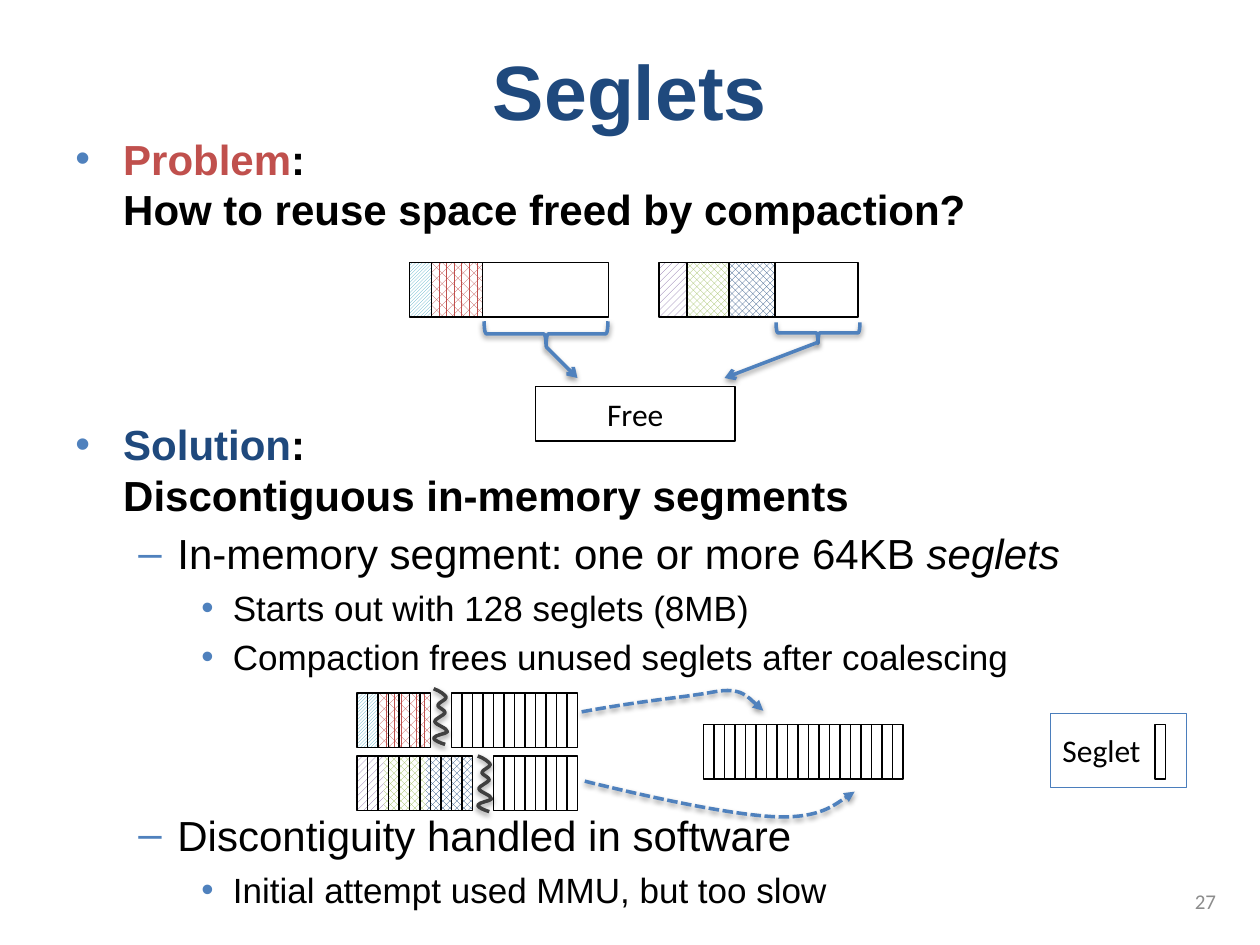
import pptx
import pptx.util
import pptx.dml.color
import pptx.enum.dml
import pptx.enum.shapes
import pptx.enum.text
import pptx.oxml
import pptx.oxml.ns

Pt = pptx.util.Pt
Shape = pptx.enum.shapes.MSO_SHAPE
Align = pptx.enum.text.PP_ALIGN
Anchor = pptx.enum.text.MSO_ANCHOR
Pattern = pptx.enum.dml.MSO_PATTERN
qn = pptx.oxml.ns.qn

UNIT = pptx.util.Inches(1) / 12
TALL = 5.2
HUES = {
    "navy": "1F497D", "blue": "4F81BD", "edge": "4B7EBC", "red": "C0504D",
    "teal": "4BACC6", "green": "9BBB59", "violet": "8064A2", "black": "000000",
    "white": "FFFFFF", "grey": "8C8C8C", "dark": "404040",
}
HATCH = {
    "teal": Pattern.DARK_UPWARD_DIAGONAL, "red": Pattern.PERCENT_60,
    "violet": Pattern.WIDE_UPWARD_DIAGONAL, "green": Pattern.LARGE_CHECKER_BOARD,
    "navy": Pattern.LARGE_CHECKER_BOARD,
}
LEVELS = [(0.38, 0.38, "•"), (0.81, 0.31, "–"), (1.25, 0.25, "•")]


def tint(name):
    return pptx.dml.color.RGBColor.from_string(HUES[name])


def grid(*cells):
    return [round(cell * UNIT) for cell in cells]


def node(tag, inner="", **attrs):
    words = "".join(f' {key}="{val}"' for key, val in attrs.items())
    space = pptx.oxml.ns.nsdecls("a")
    return pptx.oxml.parse_xml(f"<a:{tag} {space}{words}>{inner}</a:{tag}>")


class Deck:
    def __init__(self):
        self.show = pptx.Presentation()
        self.show.slide_width, self.show.slide_height = grid(120, 90)
        self.slide = self.show.slides.add_slide(self.show.slide_layouts[5])
        self.shapes = self.slide.shapes

    def font(self, run, size, hue, face="Calibri", bold=False, slant=False):
        run.font.size, run.font.name = Pt(size), face
        run.font.bold, run.font.italic = bold, slant
        run.font.color.rgb = tint(hue)

    def label(self, shape, text, size, hue, align, **style):
        frame = shape.text_frame
        frame.text = text
        frame.vertical_anchor = Anchor.MIDDLE
        frame.paragraphs[0].alignment = align
        self.font(frame.paragraphs[0].runs[0], size, hue, **style)

    def title(self, text, *cells):
        head = self.shapes.title
        head.left, head.top, head.width, head.height = grid(*cells)
        self.label(head, text, 44, "navy", Align.CENTER, face="Arial", bold=True)

    def note(self, text, cells, size, hue, align, wrap=True):
        box = self.shapes.add_textbox(*grid(*cells))
        self.label(box, text, size, hue, align)
        box.text_frame.word_wrap = wrap

    def body(self, items, *cells):
        frame = self.shapes.add_textbox(*grid(*cells)).text_frame
        frame.word_wrap = True
        for place, (level, size, gap, runs) in enumerate(items):
            para = frame.add_paragraph() if place else frame.paragraphs[0]
            para.level = level
            para.line_spacing, para.space_before = Pt(size * 1.2), Pt(gap)
            for text, hue, bold, slant in runs:
                if text.startswith("\n"):
                    para.add_line_break()
                run = para.add_run()
                run.text = text.strip("\n")
                self.font(run, size, hue, "Arial", bold, slant)
            left, hang, mark = LEVELS[level]
            props = para._p.get_or_add_pPr()
            props.set("marL", str(pptx.util.Inches(left)))
            props.set("indent", str(-pptx.util.Inches(hang)))
            props.append(node("buClr", f'<a:srgbClr val="{HUES["blue"]}"/>'))
            props.append(node("buFont", typeface="Arial"))
            props.append(node("buChar", char=mark))

    def pen(self, shape, hue, width):
        shape.line.color.rgb = tint(hue)
        shape.line.width = Pt(width)

    def shade(self, shape):
        glow = (f'<a:outerShdw blurRad="{Pt(3.1)}" dist="{Pt(1.6)}" dir="5400000" rotWithShape="0">'
                '<a:srgbClr val="000000"><a:alpha val="38000"/></a:srgbClr></a:outerShdw>')
        shape._element.spPr.append(node("effectLst", glow))

    def tip(self, shape, kind):
        shape.line._get_or_add_ln().append(node("tailEnd", type=kind))

    def box(self, x, y, wide, tall=TALL, fill="white", edge="black", width=1):
        rect = self.shapes.add_shape(Shape.RECTANGLE, *grid(x, y, wide, tall))
        rect.shadow.inherit = False
        if fill is None:
            rect.fill.background()
        elif fill in HATCH:
            rect.fill.patterned()
            rect.fill.pattern = HATCH[fill]
            rect.fill.fore_color.rgb = tint(fill)
            rect.fill.back_color.rgb = tint("white")
        else:
            rect.fill.solid()
            rect.fill.fore_color.rgb = tint(fill)
        if edge:
            self.pen(rect, edge, width)
        else:
            rect.line.fill.background()
        return rect

    def strip(self, x, y, parts, edge="black"):
        for fill, wide in parts:
            self.box(x, y, wide, fill=fill, edge=edge)
            x += wide

    def row(self, x, y, count, fill="white"):
        for step in range(count):
            self.box(x + step, y, 1, fill=fill, width=0.75)

    def brace(self, x, y, wide, tall):
        cells = grid(x - tall / 2, y - wide / 2, tall, wide)
        brace = self.shapes.add_shape(Shape.RIGHT_BRACE, *cells)
        brace.rotation = 90
        brace.fill.background()
        self.pen(brace, "blue", 2)
        self.shade(brace)

    def arrow(self, *cells):
        kind = pptx.enum.shapes.MSO_CONNECTOR.STRAIGHT
        line = self.shapes.add_connector(kind, *grid(*cells))
        self.pen(line, "blue", 2)
        self.tip(line, "arrow")
        self.shade(line)

    def curve(self, x, y, points, hue, dash=False):
        form = self.shapes.build_freeform(*grid(x, y))
        form.add_line_segments([grid(x + dx, y + dy) for dx, dy in points], close=False)
        shape = form.convert_to_shape()
        legs = list(shape._element.iter(qn("a:lnTo")))
        for start in range(0, len(legs), 3):
            bend = node("cubicBezTo")
            legs[start].addprevious(bend)
            for leg in legs[start:start + 3]:
                bend.append(leg[0])
                leg.getparent().remove(leg)
        shape.fill.background()
        self.pen(shape, hue, 2)
        if dash:
            shape.line.dash_style = pptx.enum.dml.MSO_LINE.SQUARE_DOT
            self.tip(shape, "triangle")
        self.shade(shape)


def main():
    deck = Deck()
    deck.title("Seglets", 6, 1, 108, 15)
    deck.body([
        (0, 24, 0, [("Problem", "red", True, False), (":", "black", True, False),
                    ("\nHow to reuse space freed by compaction?", "black", True, False)]),
        (0, 24, 105.5, [("Solution", "navy", True, False), (":", "black", True, False),
                        ("\nDiscontiguous in-memory segments", "black", True, False)]),
        (1, 24, 4.8, [("In-memory segment: one or more 64KB ", "black", False, False),
                      ("seglets", "black", False, True)]),
        (2, 20, 5, [("Starts out with 128 seglets (8MB)", "black", False, False)]),
        (2, 20, 4, [("Compaction frees unused seglets after coalescing", "black", False, False)]),
        (1, 24, 75, [("Discontiguity handled in software", "black", False, False)]),
        (2, 20, 5, [("Initial attempt used MMU, but too slow", "black", False, False)]),
    ], 6, 12.1, 108, 77)
    deck.note("27", (89, 83.4, 28, 4.8), 12, "grey", Align.RIGHT)

    first = [("teal", 2.1), ("red", 4.85)]
    second = [("violet", 2.65), ("green", 4), ("navy", 4.4)]
    deck.strip(39, 25, first + [("white", 12)])
    deck.strip(62.75, 25, second + [("white", 7.95)])
    free = deck.box(51, 36.8, 19)
    deck.label(free, "Free", 18, "black", Align.CENTER)
    deck.brace(77.9, 31.7, 8, 2)
    deck.brace(52, 31.8, 11.8, 2.4)
    deck.arrow(52, 33, 55, 36)
    deck.arrow(77.9, 32.6, 69, 36)

    deck.strip(34, 66, first, edge=None)
    deck.strip(33.9, 72, second, edge=None)
    for x, y, count in [(43, 66, 12), (47, 72, 8), (67, 69, 19), (110, 69, 1)]:
        deck.row(x, y, count)
    for y, count in [(66, 7), (72, 11)]:
        deck.row(34, y, count, fill=None)

    tear = [(0.6, 0.2), (1.1, 0.6), (1.2, 0.8), (1.2, 1.1), (0.4, 1.3), (0.4, 1.6), (0.4, 1.8),
            (1.1, 2), (1.1, 2.3), (1, 2.5), (0.1, 2.9), (0.1, 3.1), (0.2, 3.5), (1.3, 3.7),
            (1.3, 4.1), (1.2, 4.3), (0.1, 4.4), (0, 4.7), (0, 4.9), (0.7, 5.2), (1.1, 5.3)]
    for x, y in [(41.3, 65.6), (45.5, 72)]:
        deck.curve(x, y, tear, "dark")
    deck.curve(55.4, 67.8, [(5.9, -1.1), (10, -1.4), (12.6, -1.9), (15.3, -2.4),
                            (17.3, -0.1), (17.3, -0.1)], "blue", dash=True)
    deck.curve(55.7, 74.4, [(6.9, 1.7), (14, 3.2), (18.3, 3.4), (22.5, 3.5),
                            (25.7, 1), (25.7, 1)], "blue", dash=True)

    deck.note("Seglet", (100, 69, 10, 4.8), 18, "black", Align.LEFT, wrap=False)
    deck.box(100, 68, 13, 7, fill=None, edge="edge", width=0.5)
    deck.show.save("out.pptx")


if __name__ == "__main__":
    main()
